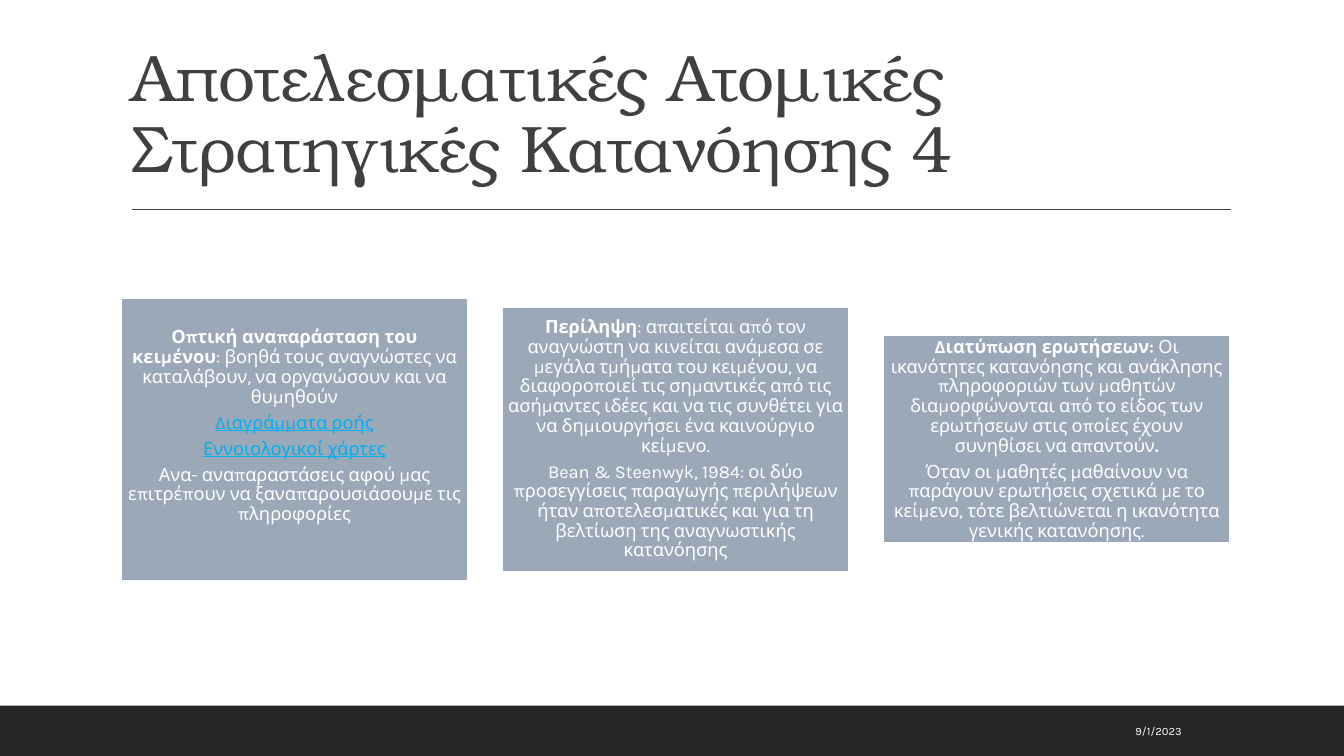
"""Build the slide on individual comprehension strategies."""
from dataclasses import dataclass

from lxml import etree
from pptx import Presentation
from pptx.dml.color import RGBColor
from pptx.enum.shapes import MSO_CONNECTOR, MSO_SHAPE
from pptx.enum.text import MSO_ANCHOR, MSO_AUTO_SIZE, PP_ALIGN
from pptx.oxml.ns import qn
from pptx.util import Inches, Pt

RECTANGLE = MSO_SHAPE.RECTANGLE
STRAIGHT = MSO_CONNECTOR.STRAIGHT
LEFT, CENTER, RIGHT = PP_ALIGN.LEFT, PP_ALIGN.CENTER, PP_ALIGN.RIGHT
MIDDLE, BOTTOM = MSO_ANCHOR.MIDDLE, MSO_ANCHOR.BOTTOM
NO_FIT = MSO_AUTO_SIZE.NONE


@dataclass(frozen=True)
class Theme:
    """Hold the fonts, colours and type sizes of the slide."""
    heading_font: str = "TeX Gyre Bonum"
    body_font: str = "Karla"
    heading: RGBColor = RGBColor(0x40, 0x40, 0x40)
    band: RGBColor = RGBColor(0x26, 0x26, 0x26)
    card: RGBColor = RGBColor(0x9B, 0xA8, 0xB7)
    light: RGBColor = RGBColor(0xFF, 0xFF, 0xFF)
    accent: RGBColor = RGBColor(0x00, 0xB0, 0xF0)
    title_size: float = 47
    card_size: float = 13
    date_size: float = 8


THEME = Theme()

CARD_LEFT, CARD_STEP, CARD_WIDTH, CARD_MIDDLE = 1.2, 3.78, 3.44, 4.36
CARD_INSET = 0.05

# Each card: height, bottom inset, paragraphs of (text, bold) spans with an accent flag.
CARDS = [
    (2.81, 0.31, [
        ([("Οπτική αναπαράσταση του κειμένου", True),
          (": βοηθά τους αναγνώστες να καταλάβουν, να οργανώσουν και να θυμηθούν", False)], False),
        ([("Διαγράμματα ροής", False)], True),
        ([("Εννοιολογικοί χάρτες", False)], True),
        ([("Ανα- αναπαραστάσεις αφού μας επιτρέπουν να ξαναπαρουσιάσουμε τις "
           "πληροφορίες", False)], False),
    ]),
    (2.63, CARD_INSET, [
        ([("Περίληψη", True),
          (": απαιτείται από τον αναγνώστη να κινείται ανάμεσα σε μεγάλα τμήματα του "
           "κειμένου, να διαφοροποιεί τις σημαντικές από τις ασήμαντες ιδέες και να τις "
           "συνθέτει για να δημιουργήσει ένα καινούργιο κείμενο.", False)], False),
        ([("Bean & Steenwyk, 1984: οι δύο προσεγγίσεις παραγωγής περιλήψεων ήταν "
           "αποτελεσματικές και για τη βελτίωση της αναγνωστικής κατανόησης", False)], False),
    ]),
    (2.06, CARD_INSET, [
        ([("Διατύπωση ερωτήσεων: ", True),
          ("Οι ικανότητες κατανόησης και ανάκλησης πληροφοριών των μαθητών "
           "διαμορφώνονται από το είδος των ερωτήσεων στις οποίες έχουν συνηθίσει να "
           "απαντούν", False),
          (".", True)], False),
        ([("Όταν οι μαθητές μαθαίνουν να παράγουν ερωτήσεις σχετικά με το κείμενο, τότε "
           "βελτιώνεται η ικανότητα γενικής κατανόησης.", False)], False),
    ]),
]


def style_paragraph(para, font, size, color, align):
    """Set the font and alignment of a whole paragraph."""
    para.alignment = align
    para.font.name = font
    para.font.size = Pt(size)
    para.font.color.rgb = color


def add_rectangle(page, left, top, width, height, fill):
    """Add a flat filled rectangle without an outline."""
    box = page.shapes.add_shape(
        RECTANGLE, Inches(left), Inches(top), Inches(width), Inches(height))
    box.shadow.inherit = False
    box.fill.solid()
    box.fill.fore_color.rgb = fill
    box.line.fill.background()
    return box


def add_rule(page, left, right, top):
    """Add the thin horizontal line under the title."""
    rule = page.shapes.add_connector(
        STRAIGHT, Inches(left), Inches(top), Inches(right), Inches(top))
    rule.line.color.rgb = THEME.heading
    rule.line.width = Pt(1)
    etree.SubElement(rule._element.spPr, qn("a:effectLst"))


def set_title(page, text):
    """Place and format the title placeholder."""
    title = page.shapes.title
    title.left, title.top = Inches(1.2), Inches(0.31)
    title.width, title.height = Inches(11), Inches(1.59)
    frame = title.text_frame
    frame.text = text
    frame.word_wrap = True
    frame.auto_size = NO_FIT
    frame.vertical_anchor = BOTTOM
    para = frame.paragraphs[0]
    para.line_spacing = 0.9
    style_paragraph(para, THEME.heading_font, THEME.title_size, THEME.heading, LEFT)
    para.runs[0]._r.get_or_add_rPr().set("spc", "-50")


def add_card(page, left, height, bottom_inset, paragraphs):
    """Add a strategy card centred on the common middle line."""
    box = add_rectangle(
        page, left, CARD_MIDDLE - height / 2, CARD_WIDTH, height, THEME.card)
    box.line.color.rgb = THEME.light
    box.line.width = Pt(1.25)
    frame = box.text_frame
    frame.word_wrap = True
    frame.vertical_anchor = MIDDLE
    frame.margin_left = frame.margin_right = frame.margin_top = Inches(CARD_INSET)
    frame.margin_bottom = Inches(bottom_inset)
    for index, (spans, accented) in enumerate(paragraphs):
        para = frame.add_paragraph() if index else frame.paragraphs[0]
        para.line_spacing = 0.9
        para.space_after = Pt(4.55)
        color = THEME.accent if accented else THEME.light
        style_paragraph(para, THEME.body_font, THEME.card_size, color, CENTER)
        para.font.underline = accented
        for text, bold in spans:
            span = para.add_run()
            span.text = text
            span.font.bold = bold


def add_date(page, text):
    """Add the date on the bottom band."""
    box = page.shapes.add_textbox(Inches(8.99), Inches(7.05), Inches(2.83), Inches(0.4))
    frame = box.text_frame
    frame.word_wrap = True
    frame.vertical_anchor = MIDDLE
    frame.text = text
    style_paragraph(
        frame.paragraphs[0], THEME.body_font, THEME.date_size, THEME.light, RIGHT)


def main():
    """Build and save the deck."""
    deck = Presentation()
    deck.slide_width, deck.slide_height = Inches(13.33), Inches(7.5)
    page = deck.slides.add_slide(deck.slide_layouts[5])
    add_rectangle(page, 0, 7, 13.33, 0.5, THEME.band)
    add_rule(page, 1.31, 12.21, 2.08)
    set_title(page, "Αποτελεσματικές Ατομικές Στρατηγικές Κατανόησης 4")
    for index, (height, bottom_inset, paragraphs) in enumerate(CARDS):
        add_card(page, CARD_LEFT + index * CARD_STEP, height, bottom_inset, paragraphs)
    add_date(page, "9/1/2023")
    deck.save("out.pptx")


if __name__ == "__main__":
    main()
